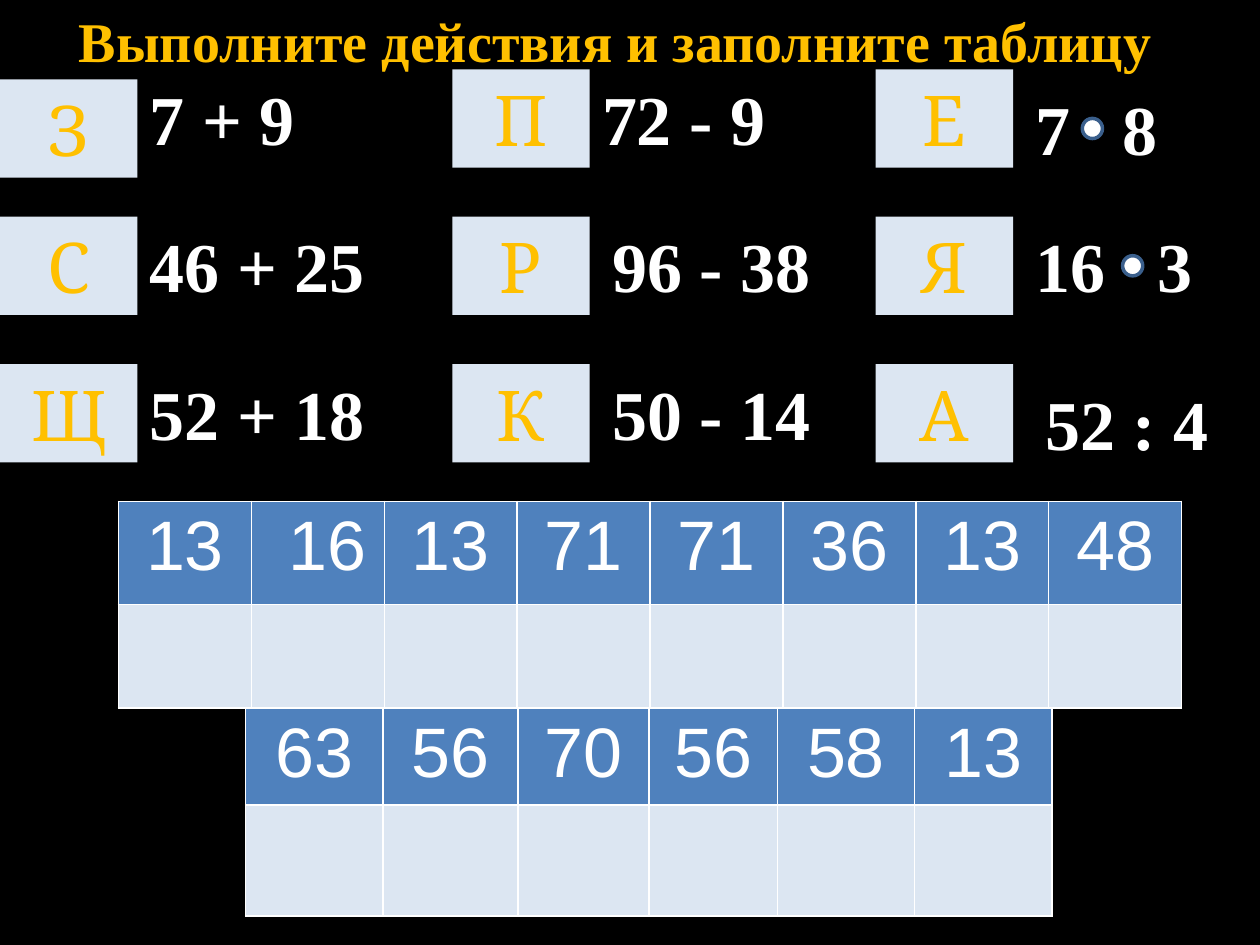
import pptx
import pptx.util
import pptx.dml.color
import pptx.enum.shapes
import pptx.enum.text
import pptx.oxml
import pptx.oxml.ns

Inches = pptx.util.Inches
CENTER = pptx.enum.text.PP_ALIGN.CENTER
SHAPES = pptx.enum.shapes.MSO_SHAPE

WHITE, BLACK, GOLD = "FFFFFF", "000000", "FFC000"
PALE, BLUE, DOT_EDGE = "DCE6F2", "4F81BD", "3A5F8C"

COLUMNS = (0, 3.59, 6.95)
TOP, ROW_STEP = 0.55, 1.17
TILE_WIDTH, TILE_HEIGHT = 1.09, 0.78
NUDGE = 0.08

# Letter, its downward nudge, expression, its nudges right and down, its width
TASKS = (
    (("З", 1, "7 + 9", 0, 0, 1.64), ("П", 0, "72 - 9", 0, 0, 1.56), ("Е", 0, "7   8", 1, 1, 1.33)),
    (("С", 0, "46 + 25", 0, 0, 2.42), ("Р", 0, "96 - 38", 1, 0, 1.88), ("Я", 0, "16   3", 1, 0, 1.48)),
    (("Щ", 0, "52 + 18", 0, 0, 2.27), ("К", 0, "50 - 14", 1, 0, 1.95), ("А", 0, "52 : 4", 2, 1, 1.56)),
)
MULTIPLICATION_DOTS = ((8.59, 0.94), (8.91, 2.03))


def color(value):
    return pptx.dml.color.RGBColor.from_string(value)


def paint(fill, value):
    fill.solid()
    fill.fore_color.rgb = color(value)


def write(text_frame, text, size, font_name, font_color, bold=False, align=None):
    text_frame.text = text
    paragraph = text_frame.paragraphs[0]
    paragraph.alignment = align
    font = paragraph.runs[0].font
    font.size = pptx.util.Pt(size)
    font.name = font_name
    font.bold = bold
    font.color.rgb = color(font_color)


def add_title(slide, text):
    title = slide.shapes.title
    title.left, title.top = 0, 0
    title.width, title.height = Inches(9.77), Inches(0.64)
    title.text_frame.vertical_anchor = pptx.enum.text.MSO_ANCHOR.TOP
    write(title.text_frame, text, 32, "Times New Roman", GOLD, True, CENTER)


def add_plain_shape(slide, kind, left, top, width, height, fill):
    shape = slide.shapes.add_shape(kind, Inches(left), Inches(top), Inches(width), Inches(height))
    shape.shadow.inherit = False
    paint(shape.fill, fill)
    return shape


def add_letter(slide, letter, left, top):
    tile = add_plain_shape(slide, SHAPES.RECTANGLE, left, top, TILE_WIDTH, TILE_HEIGHT, PALE)
    tile.line.fill.background()
    write(tile.text_frame, letter, 40, "Cambria", GOLD, align=CENTER)


def add_expression(slide, text, left, top, width):
    box = slide.shapes.add_textbox(Inches(left), Inches(top), Inches(width), Inches(0.77))
    box.text_frame.word_wrap = True
    write(box.text_frame, text, 40, "Times New Roman", WHITE, True)


def add_dot(slide, left, top):
    dot = add_plain_shape(slide, SHAPES.FLOWCHART_CONNECTOR, left, top, 0.16, 0.16, WHITE)
    dot.line.color.rgb = color(DOT_EDGE)
    dot.line.width = pptx.util.Pt(2)


def add_borders(cell):
    properties = cell._tc.get_or_add_tcPr()
    for side in ("lnL", "lnR", "lnT", "lnB"):
        properties.append(pptx.oxml.parse_xml(
            f'<a:{side} {pptx.oxml.ns.nsdecls("a")} w="12700"><a:solidFill>'
            f'<a:srgbClr val="{WHITE}"/></a:solidFill></a:{side}>'))


def add_answer_table(slide, numbers, left, top, widths, heights):
    """Numbers in the header row, with empty cells for the letters below."""
    table = slide.shapes.add_table(
        2, len(numbers), Inches(left), Inches(top),
        Inches(sum(widths)), Inches(sum(heights))).table
    for row, height in zip(table.rows, heights):
        row.height = Inches(height)
    for index, (number, width) in enumerate(zip(numbers, widths)):
        table.columns[index].width = Inches(width)
        header, answer = table.cell(0, index), table.cell(1, index)
        for cell, fill in ((header, BLUE), (answer, PALE)):
            add_borders(cell)
            paint(cell.fill, fill)
        write(header.text_frame, number, 40, "Arial", WHITE, align=CENTER)


def main():
    presentation = pptx.Presentation()
    presentation.slide_width, presentation.slide_height = Inches(10), Inches(7.5)
    slide = presentation.slides.add_slide(presentation.slide_layouts[5])
    paint(slide.background.fill, BLACK)

    add_title(slide, "Выполните действия и заполните таблицу")
    for row, tasks in enumerate(TASKS):
        top = TOP + row * ROW_STEP
        for left, (letter, drop, text, right, down, width) in zip(COLUMNS, tasks):
            add_letter(slide, letter, left, top + drop * NUDGE)
            add_expression(slide, text, left + TILE_WIDTH + right * NUDGE, top + down * NUDGE, width)
    for left, top in MULTIPLICATION_DOTS:
        add_dot(slide, left, top)

    add_answer_table(slide, ("13", " 16", "13", "71", "71", "36", "13", "48"),
                     0.94, 3.98, (1.055,) * 8, (0.82, 0.82))
    add_answer_table(slide, ("63", "56", "70", "56", "58", "13"),
                     1.95, 5.62, (1.09, 1.07, 1.04, 1.02, 1.09, 1.09), (0.77, 0.88))
    presentation.save("out.pptx")


if __name__ == "__main__":
    main()
